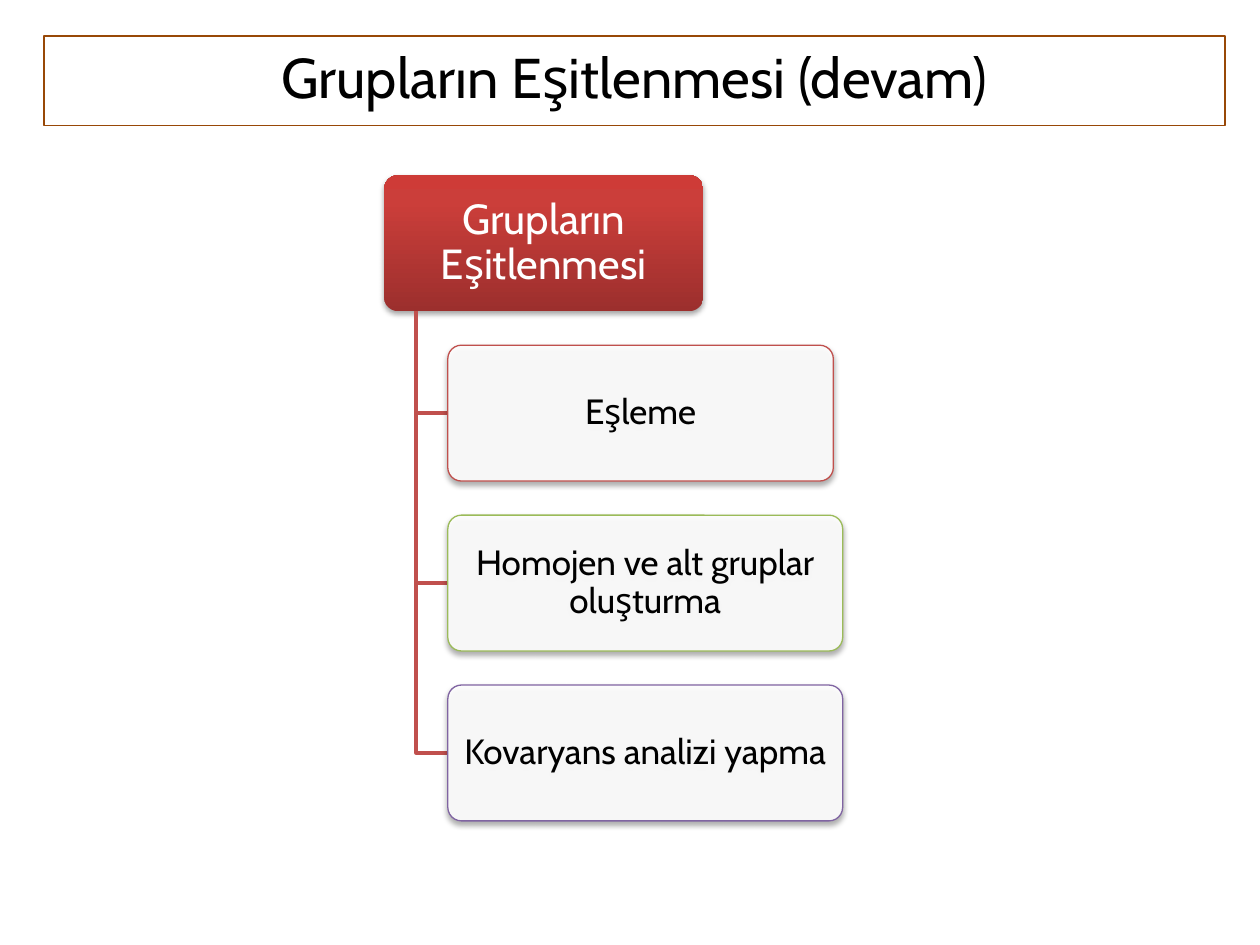
from copy import deepcopy
from dataclasses import dataclass

from lxml import etree
from pptx import Presentation
from pptx.dml.color import RGBColor
from pptx.enum import shapes, text
from pptx.oxml import ns
from pptx.util import Pt

FONT = "Cabin"
COLORS = {
    "title_line": "984807",
    "black": "000000",
    "white": "FFFFFF",
    "red": "C0504D",
    "green": "9BBB59",
    "purple": "8064A2",
    "root_dark": "9C2F2D",
    "root_mid": "CB3E3A",
    "root_light": "CE3B37",
}
ROOT_STOPS = ((0, "root_dark"), (0.8, "root_mid"), (1, "root_light"))
ROOT_LEFT, ROOT_TOP, ROOT_WIDTH = 219.6, 100.2, 182.2
NODE_HEIGHT, NODE_PITCH = 77.6, 97.1
TRUNK_LEFT, CHILD_LEFT = 237.8, 255.9


@dataclass
class Child:
    label: str
    line: str
    width: float


CHILDREN = (
    Child("Eşleme", "red", 220.3),
    Child("Homojen ve alt gruplar oluşturma", "green", 225.6),
    Child("Kovaryans analizi yapma", "purple", 225.6),
)


def color(name: str) -> RGBColor:
    return RGBColor.from_string(COLORS[name])


def add_label(box, label: str, size: float, ink: str):
    para = box.text_frame.paragraphs[0]
    para.text = label
    para.alignment = text.PP_ALIGN.CENTER
    para.font.name = FONT
    para.font.size = Pt(size)
    para.font.color.rgb = color(ink)
    return para


def set_line(box, name: str, width: float) -> None:
    box.line.color.rgb = color(name)
    box.line.width = Pt(width)


def add_alpha(parent, percent: int) -> None:
    etree.SubElement(parent, ns.qn("a:alpha"), val=str(percent * 1000))


def add_shadow(box) -> None:
    box.shadow.inherit = False
    effects = box._element.spPr.find(ns.qn("a:effectLst"))
    shadow = etree.SubElement(
        effects, ns.qn("a:outerShdw"), blurRad=str(Pt(3.1)),
        dist=str(Pt(1.8)), dir="5400000", rotWithShape="0")
    tint = etree.SubElement(shadow, ns.qn("a:srgbClr"), val=COLORS["black"])
    add_alpha(tint, 35)


def add_title(page, label: str) -> None:
    box = page.shapes.add_shape(
        shapes.MSO_SHAPE.RECTANGLE, Pt(25.2), Pt(20.6), Pt(674.8), Pt(51.1))
    box.shadow.inherit = False
    box.fill.background()
    set_line(box, "title_line", 0.75)
    box.text_frame.word_wrap = True
    box.text_frame.vertical_anchor = text.MSO_ANCHOR.TOP
    add_label(box, label, 32, "black")


def add_node(page, left: float, top: float, width: float, label: str,
             size: float, ink: str):
    box = page.shapes.add_shape(
        shapes.MSO_SHAPE.ROUNDED_RECTANGLE,
        Pt(left), Pt(top), Pt(width), Pt(NODE_HEIGHT))
    box.adjustments[0] = 0.1
    add_shadow(box)
    frame = box.text_frame
    frame.word_wrap = True
    frame.vertical_anchor = text.MSO_ANCHOR.MIDDLE
    frame.margin_left = frame.margin_right = Pt(5)
    frame.margin_top = frame.margin_bottom = Pt(4)
    add_label(box, label, size, ink).line_spacing = 0.9
    return box


def add_root(page, label: str) -> None:
    box = add_node(page, ROOT_LEFT, ROOT_TOP, ROOT_WIDTH, label, 24, "white")
    box.line.fill.background()
    box.fill.gradient()
    box.fill.gradient_angle = 90
    stops = box._element.spPr.find(".//" + ns.qn("a:gsLst"))
    stops.append(deepcopy(stops[-1]))
    for stop, (position, name) in zip(box.fill.gradient_stops, ROOT_STOPS):
        stop.position = position
        stop.color.rgb = color(name)


def add_elbow(page, bottom: float) -> None:
    builder = page.shapes.build_freeform(
        Pt(TRUNK_LEFT), Pt(ROOT_TOP + NODE_HEIGHT))
    builder.add_line_segments(
        [(Pt(TRUNK_LEFT), Pt(bottom)), (Pt(CHILD_LEFT), Pt(bottom))],
        close=False)
    elbow = builder.convert_to_shape()
    elbow.shadow.inherit = False
    elbow.fill.background()
    set_line(elbow, "red", 2)


def add_child(page, child: Child, top: float) -> None:
    add_elbow(page, top + NODE_HEIGHT / 2)
    box = add_node(page, CHILD_LEFT, top, child.width, child.label, 20, "black")
    box.fill.solid()
    box.fill.fore_color.rgb = color("white")
    add_alpha(box._element.spPr.find(
        ns.qn("a:solidFill") + "/" + ns.qn("a:srgbClr")), 90)
    set_line(box, child.line, 0.75)


def main() -> None:
    deck = Presentation()
    deck.slide_width, deck.slide_height = Pt(720), Pt(540)
    page = deck.slides.add_slide(deck.slide_layouts[6])
    add_title(page, "Grupların Eşitlenmesi (devam)")
    add_root(page, "Grupların Eşitlenmesi")
    for row, child in enumerate(CHILDREN, start=1):
        add_child(page, child, ROOT_TOP + row * NODE_PITCH)
    deck.save("out.pptx")


if __name__ == "__main__":
    main()
